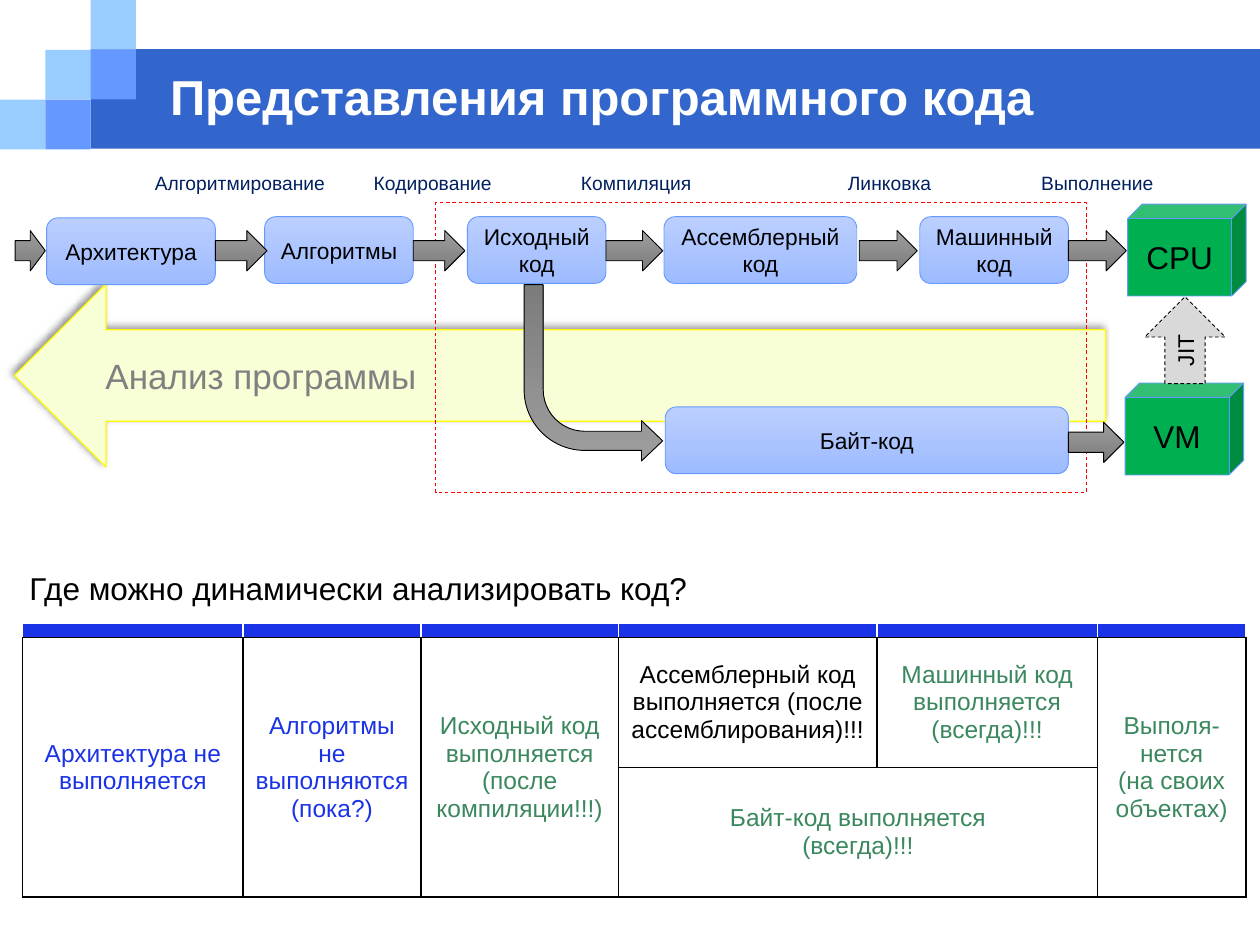
from lxml.etree import SubElement as Sub
from pptx import Presentation
from pptx.dml.color import RGBColor
from pptx.enum.dml import MSO_LINE
from pptx.enum.shapes import MSO_SHAPE as Shp
from pptx.enum.text import MSO_ANCHOR as Anchor, MSO_AUTO_SIZE as Auto, PP_ALIGN as Align
from pptx.oxml.ns import qn
from pptx.util import Inches, Pt

# Content
TITLE = "Представления программного кода"
ASK = "Где можно динамически анализировать код?"
TILES = [(0, 2, "99CCFF"), (1, 1, "99CCFF"), (2, 0, "99CCFF"),
         (2, 1, "6699FF"), (1, 2, "6699FF")]  # column, row, colour
STEPS = [("Алгоритмирование", 1.12, 1.57), ("Кодирование", 2.86, 1.15),
         ("Компиляция", 4.51, 1.08), ("Линковка", 6.62, 0.88),
         ("Выполнение", 8.16, 1.1)]  # text, left, width
CODES = [("Архитектура", 0.37, 1.73, 1.34), ("Алгоритмы", 2.1, 1.72, 1.18),
         ("Исходный\nкод", 3.71, 1.72, 1.1), ("Ассемблерный\nкод", 5.27, 1.72, 1.53),
         ("Машинный\nкод", 7.3, 1.72, 1.18), ("Байт-код", 5.28, 3.23, 3.2)]
ARROWS = [(0.12, 1.83, 0.24), (1.71, 1.83, 0.41), (3.28, 1.83, 0.41),
          (4.81, 1.83, 0.45), (6.82, 1.83, 0.46), (8.48, 1.83, 0.46),
          (8.48, 3.35, 0.44)]  # left, top, width
CUBES = [("CPU", 8.95, 1.62), ("VM", 8.93, 3.04)]
COLS = [1.75, 1.41, 1.57, 2.05, 1.75, 1.18]
ROWS = [0.11, 1.03, 1.03]
BLUE, GREEN, BLACK = "1B33E7", "3B885E", "000000"
CELLS = [  # row, column, last row, last column, colour, text
    (1, 0, 2, 0, BLUE, "Архитектура не выполняется"),
    (1, 1, 2, 1, BLUE, "Алгоритмы не выполняются (пока?)"),
    (1, 2, 2, 2, GREEN, "Исходный код выполняется\n(после компиляции!!!)"),
    (1, 3, 1, 3, BLACK, "Ассемблерный код выполняется (после ассемблирования)!!!"),
    (1, 4, 1, 4, GREEN, "Машинный код выполняется\n(всегда)!!!"),
    (1, 5, 2, 5, GREEN, "Выполя-\nнется\n(на своих объектах)"),
    (2, 3, 2, 4, GREEN, "Байт-код выполняется\n(всегда)!!!")]
CODE_FILL = ("BBCFFF", "9EBBFF")
GREY_FILL = ("9D9D9D", "7C7C7C")

prs = Presentation()
prs.slide_width, prs.slide_height = Inches(10), Inches(7.5)
slide = prs.slides.add_slide(prs.slide_layouts[5])
shapes = slide.shapes


def rgb(code):
    return RGBColor.from_string(code)


def write(frame, text, size, color=BLACK, align=Align.CENTER, bold=False):
    para = frame.paragraphs[0]
    para.text = text
    para.alignment = align
    look = {"name": "Arial", "size": Pt(size), "bold": bold}
    for run in para.runs:
        for key, val in look.items():
            setattr(run.font, key, val)
        run.font.color.rgb = rgb(color)
    return para


def draw(kind, box, fill=None, line=None, width=0.5, dash=False, adj=()):
    shape = shapes.add_shape(kind, *map(Inches, box))
    shape.shadow.inherit = False
    if isinstance(fill, tuple):
        shape.fill.gradient()
        shape.fill.gradient_angle = 270
        for stop, code in zip(shape.fill.gradient_stops, fill):
            stop.color.rgb = rgb(code)
    elif fill:
        shape.fill.solid()
        shape.fill.fore_color.rgb = rgb(fill)
    else:
        shape.fill.background()
    if line:
        shape.line.color.rgb = rgb(line)
        shape.line.width = Pt(width)
        if dash:
            shape.line.dash_style = MSO_LINE.DASH
    else:
        shape.line.fill.background()
    for i, val in enumerate(adj):
        shape.adjustments[i] = val
    shape.text_frame.vertical_anchor = Anchor.MIDDLE
    return shape


def label(text, left, top, width, height, size, color=BLACK):
    frame = shapes.add_textbox(*map(Inches, (left, top, width, height))).text_frame
    frame.word_wrap = False
    frame.auto_size = Auto.SHAPE_TO_FIT_TEXT
    write(frame, text, size, color)


def edge(cell, side, color):
    line = Sub(cell._tc.get_or_add_tcPr(), qn("a:ln" + side), w=str(Pt(1)))
    Sub(Sub(line, qn("a:solidFill")), qn("a:srgbClr"), val=color)


# Title band
draw(Shp.RECTANGLE, (0.72, 0.39, 9.28, 0.79), "3366CC")
for col, row, color in TILES:
    draw(Shp.RECTANGLE, (col * 0.36, row * 0.395, 0.36, 0.395), color)
title = shapes.title
for key, val in zip(("left", "top", "width", "height"), (1.25, 0.5, 8.08, 0.53)):
    setattr(title, key, Inches(val))
title.text_frame.vertical_anchor = Anchor.MIDDLE
write(title.text_frame, TITLE, 28, "FFFFFF", Align.LEFT, True)
title.element.getparent().append(title.element)

# Analysis arrow, pointing left
big = draw(Shp.DOWN_ARROW, (3.72, -1.35, 1.45, 8.66), "F8FED6", "FFFF00", 0.75)
big.rotation = 90
big.text_frame._txBody.bodyPr.set("vert", "vert270")
para = write(big.text_frame, "Анализ программы", 20, "808080", Align.LEFT)
para._p.get_or_add_pPr().set("marL", str(Inches(0.26)))
glow = Sub(big.element.spPr.find(qn("a:effectLst")), qn("a:outerShdw"),
           blurRad=str(Pt(4)), dist=str(Pt(3)), dir="13500000")
Sub(Sub(glow, qn("a:srgbClr"), val=BLACK), qn("a:alpha"), val="40000")

# Code forms and the flow between them
draw(Shp.RECTANGLE, (3.46, 1.61, 5.16, 2.3), line="FF0000", dash=True)
for text, left, top, width in CODES:
    box = draw(Shp.ROUNDED_RECTANGLE, (left, top, width, 0.53), CODE_FILL, "6699FF")
    write(box.text_frame, text, 13)
for left, top, width in ARROWS:
    draw(Shp.RIGHT_ARROW, (left, top, width, 0.32), GREY_FILL, BLACK)
bent = draw(Shp.BENT_ARROW, (4.16, 2.26, 1.1, 1.4), GREY_FILL, BLACK,
            adj=(0.138, 0.146, 0.153, 0.438))
bent.element.spPr.find(qn("a:xfrm")).set("flipV", "1")
for text, left, top in CUBES:
    cube = draw(Shp.CUBE, (left, top, 0.94, 0.73), "00B050", "6699FF", adj=(0.157,))
    write(cube.text_frame, text, 18)
jit = draw(Shp.RIGHT_ARROW, (9.06, 2.38, 0.69, 0.64), "D9D9D9", BLACK, dash=True)
jit.rotation = 270
for side in ("left", "right", "top", "bottom"):
    setattr(jit.text_frame, "margin_" + side, 0)
write(jit.text_frame, "JIT", 13)

# Step names and question
for text, left, width in STEPS:
    label(text, left, 1.31, width, 0.29, 11, "002060")
label(ASK, 0.11, 4.47, 5.47, 0.4, 18)

# Table
table = shapes.add_table(len(ROWS), len(COLS), *map(
    Inches, (0.18, 4.95, sum(COLS), sum(ROWS)))).table
for col, width in zip(table.columns, COLS):
    col.width = Inches(width)
for row, height in zip(table.rows, ROWS):
    row.height = Inches(height)
for r, row in enumerate(table.rows):
    for cell in row.cells:
        cell.margin_left = cell.margin_right = Inches(0.08)
        for side in "LRTB":
            edge(cell, side, "FFFFFF" if r == 0 and side != "B" else BLACK)
        if r:
            cell.fill.background()
        else:
            cell.fill.solid()
            cell.fill.fore_color.rgb = rgb(BLUE)
            cell.margin_top = cell.margin_bottom = 0
            Sub(cell.text_frame.paragraphs[0]._p, qn("a:endParaRPr"), sz="100")
for r, c, last, end, color, text in CELLS:
    cell = table.cell(r, c)
    if (r, c) != (last, end):
        cell.merge(table.cell(last, end))
    cell.vertical_anchor = Anchor.MIDDLE
    write(cell.text_frame, text, 14, color)

prs.save("out.pptx")
